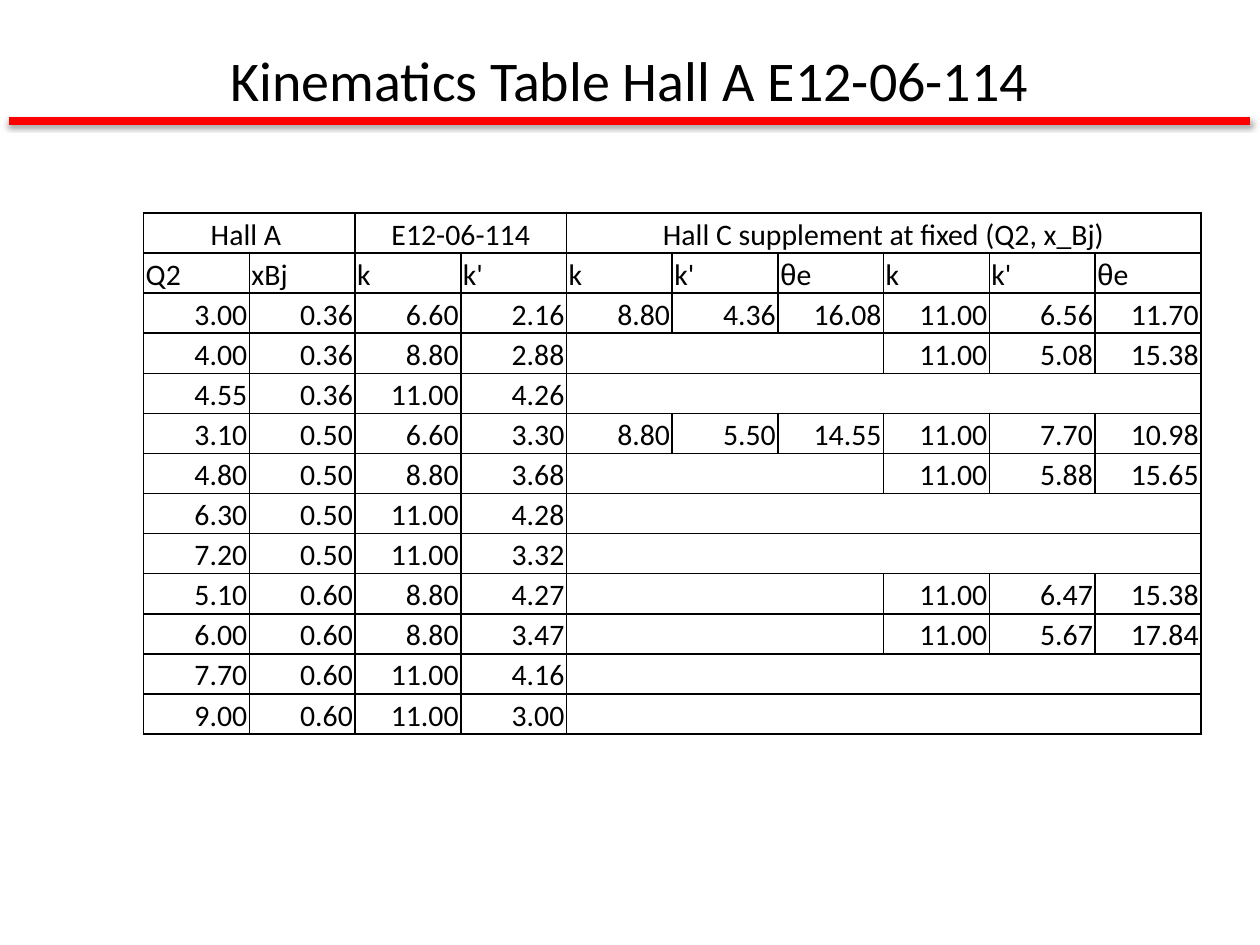
from itertools import groupby

from lxml import etree
from pptx import Presentation
from pptx.dml.color import RGBColor
from pptx.enum.shapes import MSO_CONNECTOR
from pptx.enum.text import MSO_ANCHOR, PP_ALIGN
from pptx.oxml.ns import qn
from pptx.util import Pt

STRAIGHT = MSO_CONNECTOR.STRAIGHT
MIDDLE, BOTTOM = MSO_ANCHOR.MIDDLE, MSO_ANCHOR.BOTTOM
LEFT, CENTER, RIGHT = PP_ALIGN.LEFT, PP_ALIGN.CENTER, PP_ALIGN.RIGHT

TITLE = "Kinematics Table Hall A E12-06-114"
GROUPS = [
    ("Hall A ", 2),
    ("E12-06-114", 2),
    ("Hall C supplement at fixed (Q2, x_Bj)", 6),
]
COLUMNS = ["Q2", "xBj", "k", "k'", "k", "k'", "θe", "k", "k'", "θe"]
SETTINGS = [
    ("3.00 0.36 6.60 2.16", "8.80 4.36 16.08 11.00 6.56 11.70"),
    ("4.00 0.36 8.80 2.88", "11.00 5.08 15.38"),
    ("4.55 0.36 11.00 4.26", ""),
    ("3.10 0.50 6.60 3.30", "8.80 5.50 14.55 11.00 7.70 10.98"),
    ("4.80 0.50 8.80 3.68", "11.00 5.88 15.65"),
    ("6.30 0.50 11.00 4.28", ""),
    ("7.20 0.50 11.00 3.32", ""),
    ("5.10 0.60 8.80 4.27", "11.00 6.47 15.38"),
    ("6.00 0.60 8.80 3.47", "11.00 5.67 17.84"),
    ("7.70 0.60 11.00 4.16", ""),
    ("9.00 0.60 11.00 3.00", ""),
]

COLORS = {"text": "000000", "border": "000000", "rule": "FF0000", "shadow": "000000"}
TITLE_SIZE, CELL_SIZE = 32, 17
TABLE_LEFT, TABLE_TOP, TABLE_WIDTH, TABLE_HEIGHT = 82.1, 121.7, 604.1, 298.1
RULE_LEFT, RULE_RIGHT, RULE_Y = 5, 714.5, 69.1
TITLE_FRAME = {"left": 36, "top": 21.6, "width": 648, "height": 47.5}
CELL_FORMAT = {
    "vertical_anchor": BOTTOM,
    "margin_left": Pt(1.2),
    "margin_right": Pt(1.2),
    "margin_top": Pt(1.2),
    "margin_bottom": Pt(0),
}


def apply(target, settings):
    for name, value in settings.items():
        setattr(target, name, value)


def write(paragraph, text, size, align):
    paragraph.alignment = align
    for is_greek, letters in groupby(text, key=lambda letter: letter == "θ"):
        run = paragraph.add_run()
        run.text = "".join(letters)
        apply(run.font, {"size": Pt(size), "name": "Arial" if is_greek else "Calibri"})
        run.font.color.rgb = RGBColor.from_string(COLORS["text"])


def add_solid(parent, color):
    solid = etree.SubElement(parent, qn("a:solidFill"))
    return etree.SubElement(solid, qn("a:srgbClr"), val=color)


def add_title(slide):
    title = slide.shapes.title
    apply(title, {side: Pt(value) for side, value in TITLE_FRAME.items()})
    apply(title.text_frame, {"vertical_anchor": MIDDLE, "word_wrap": True})
    write(title.text_frame.paragraphs[0], TITLE, TITLE_SIZE, CENTER)


def add_rule(slide):
    rule = slide.shapes.add_connector(
        STRAIGHT, Pt(RULE_LEFT), Pt(RULE_Y), Pt(RULE_RIGHT), Pt(RULE_Y))
    rule.line.width = Pt(4.5)
    rule.line.color.rgb = RGBColor.from_string(COLORS["rule"])
    effects = etree.SubElement(rule._element.spPr, qn("a:effectLst"))
    shadow = etree.SubElement(
        effects, qn("a:outerShdw"), blurRad=str(Pt(3.1)), dist=str(Pt(1.6)),
        dir="5400000", rotWithShape="0")
    color = etree.SubElement(shadow, qn("a:srgbClr"), val=COLORS["shadow"])
    etree.SubElement(color, qn("a:alpha"), val="38000")
    slide.shapes._spTree.insert(2, rule._element)


def format_cell(cell):
    apply(cell, CELL_FORMAT)
    properties = cell._tc.get_or_add_tcPr()
    for edge in ("a:lnL", "a:lnR", "a:lnT", "a:lnB"):
        add_solid(etree.SubElement(properties, qn(edge), w=str(Pt(1))), COLORS["border"])
    cell.fill.background()
    paragraph = cell.text_frame.paragraphs[0]._p
    etree.SubElement(paragraph, qn("a:endParaRPr"), sz=str(CELL_SIZE * 100))


def table_rows():
    yield [(text, span, CENTER) for text, span in GROUPS]
    yield [(text, 1, LEFT) for text in COLUMNS]
    for hall_a, hall_c in SETTINGS:
        measured, supplement = hall_a.split(), hall_c.split()
        gap = len(COLUMNS) - len(measured) - len(supplement)
        row = [(value, 1, RIGHT) for value in measured]
        if gap:
            row.append(("", gap, RIGHT))
        yield row + [(value, 1, RIGHT) for value in supplement]


def add_kinematics(slide):
    rows = list(table_rows())
    table = slide.shapes.add_table(
        len(rows), len(COLUMNS), Pt(TABLE_LEFT), Pt(TABLE_TOP),
        Pt(TABLE_WIDTH), Pt(TABLE_HEIGHT)).table
    apply(table, {"first_row": False, "horz_banding": False})
    for column in table.columns:
        column.width = Pt(TABLE_WIDTH / len(COLUMNS))
    for row in table.rows:
        row.height = Pt(TABLE_HEIGHT / len(rows))
    for row_index, row in enumerate(rows):
        start = 0
        for text, span, align in row:
            cell = table.cell(row_index, start)
            if span > 1:
                cell.merge(table.cell(row_index, start + span - 1))
            write(cell.text_frame.paragraphs[0], text, CELL_SIZE, align)
            start += span
    for cell in table.iter_cells():
        format_cell(cell)


def main():
    deck = Presentation()
    apply(deck, {"slide_width": Pt(720), "slide_height": Pt(540)})
    slide = deck.slides.add_slide(deck.slide_layouts[5])
    add_title(slide)
    add_rule(slide)
    add_kinematics(slide)
    deck.save("out.pptx")


if __name__ == "__main__":
    main()
